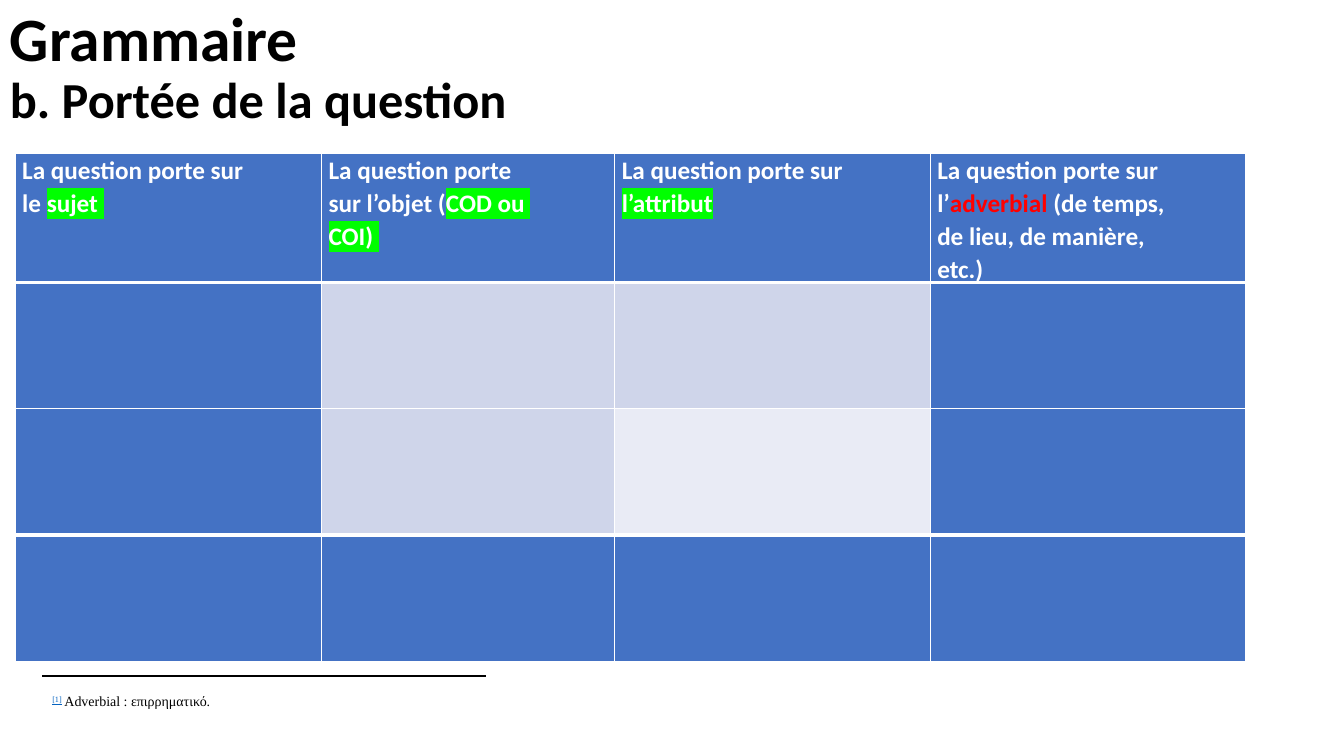
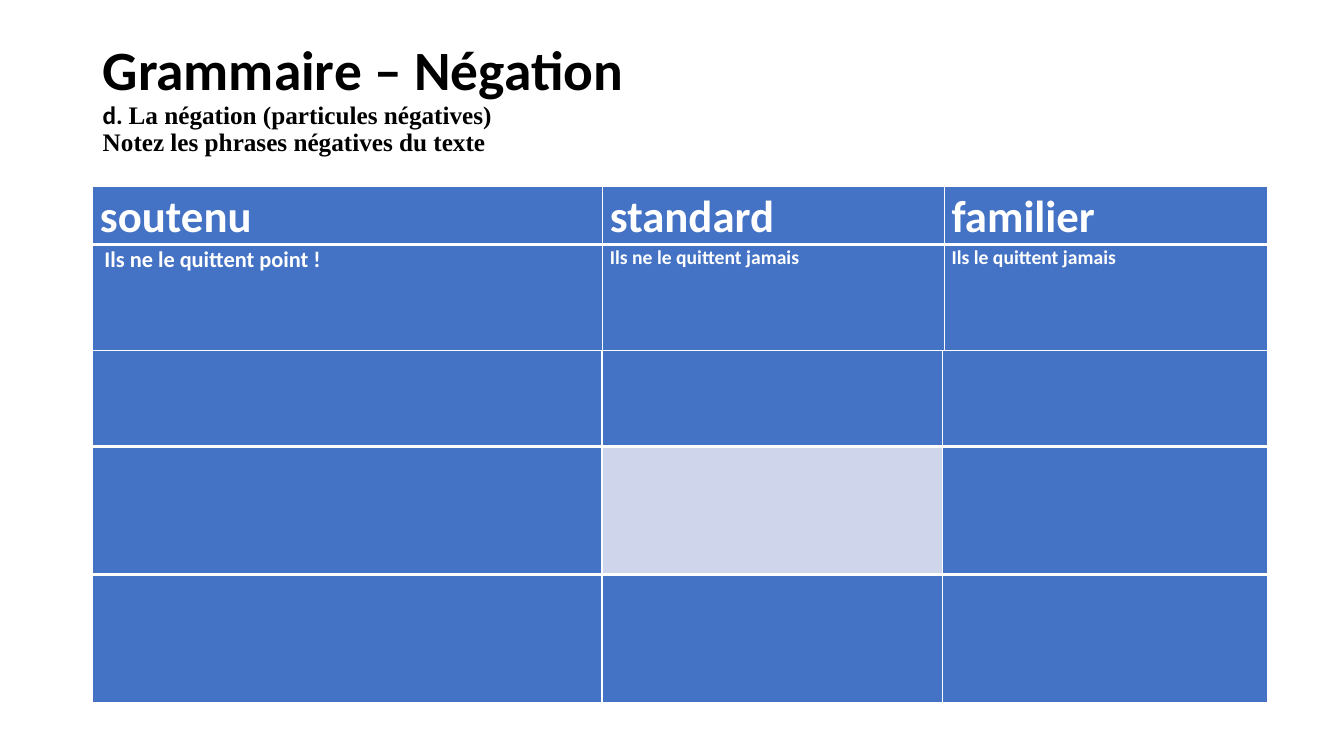
from typing import NamedTuple, Optional

from lxml.etree import SubElement
from pptx import Presentation
from pptx.dml.color import RGBColor
from pptx.enum.shapes import MSO_CONNECTOR
from pptx.enum.text import MSO_ANCHOR
from pptx.oxml.ns import qn
from pptx.util import Cm, Pt

BLACK = RGBColor(0x00, 0x00, 0x00)
WHITE = RGBColor(0xFF, 0xFF, 0xFF)
RED = RGBColor(0xFF, 0x00, 0x00)
GREEN = RGBColor(0x00, 0xFF, 0x00)
LINK_BLUE = RGBColor(0x05, 0x63, 0xC1)
BLUE = RGBColor(0x44, 0x72, 0xC4)
PALE = RGBColor(0xCF, 0xD5, 0xEA)
PALER = RGBColor(0xE9, 0xEB, 0xF5)

SANS = "Calibri"
SERIF = "Times New Roman"


class Run(NamedTuple):
    text: str
    size: float = 18
    color: Optional[RGBColor] = None
    font: str = SANS
    bold: bool = True
    highlight: Optional[RGBColor] = None
    underline: bool = False
    superscript: bool = False


class Deck:
    TITLE_SPACING = 0.9
    CELL_SPACING = 1.07
    CELL_MARGIN = Cm(0.18)
    THIN, THICK = Pt(1), Pt(3)

    def __init__(self):
        self.prs = Presentation()
        self.prs.slide_width, self.prs.slide_height = Cm(33.87), Cm(19.05)
        self.slide = None

    def new_slide(self):
        self.slide = self.prs.slides.add_slide(self.prs.slide_layouts[6])

    def add_lines(self, frame, lines, color, spacing):
        """Fill a text frame with one paragraph per line, each a list of runs."""
        for i, line in enumerate(lines):
            paragraph = frame.paragraphs[0] if i == 0 else frame.add_paragraph()
            paragraph.line_spacing = spacing
            for part in line:
                self.add_run(paragraph, part, color)

    def add_run(self, paragraph, part, color):
        run = paragraph.add_run()
        run.text = part.text
        font = run.font
        font.size, font.bold = Pt(part.size), part.bold
        font.color.rgb = part.color or color
        props = run._r.get_or_add_rPr()
        if part.highlight:
            mark = SubElement(props, qn("a:highlight"))
            SubElement(mark, qn("a:srgbClr"), val=str(part.highlight))
        font.name = part.font
        if part.underline:
            font.underline = True
        if part.superscript:
            props.set("baseline", "30000")

    def text(self, left, top, width, height, lines, spacing=1.0, wrap=True):
        box = self.slide.shapes.add_textbox(Cm(left), Cm(top), Cm(width), Cm(height))
        frame = box.text_frame
        frame.word_wrap = wrap
        frame.vertical_anchor = MSO_ANCHOR.MIDDLE
        self.add_lines(frame, lines, BLACK, spacing)

    def title(self, left, top, height, lines):
        self.text(left, top, 29.21, height, lines, self.TITLE_SPACING)

    def rule(self, left, top, width):
        line = self.slide.shapes.add_connector(
            MSO_CONNECTOR.STRAIGHT, Cm(left), Cm(top), Cm(left + width), Cm(top))
        line.line.color.rgb, line.line.width = BLACK, Pt(1.5)
        SubElement(line._element.spPr, qn("a:effectLst"))

    def borders(self, cell, above, below):
        props = cell._tc.get_or_add_tcPr()
        sides = {"L": self.THIN, "R": self.THIN, "T": above, "B": below}
        for side, width in sides.items():
            edge = SubElement(props, qn(f"a:ln{side}"), w=str(width))
            fill = SubElement(edge, qn("a:solidFill"))
            SubElement(fill, qn("a:srgbClr"), val=str(WHITE))

    def table(self, left, top, widths, heights, texts, thick_below, fills=None):
        """Draw a blue grid; fills maps (row, column) to the other colours."""
        table = self.slide.shapes.add_table(
            len(heights), len(widths), Cm(left), Cm(top),
            Cm(sum(widths)), Cm(sum(heights))).table
        table.first_row = table.horz_banding = False
        for column, width in zip(table.columns, widths):
            column.width = Cm(width)
        for r, height in enumerate(heights):
            table.rows[r].height = Cm(height)
            above = self.THICK if r - 1 in thick_below else self.THIN
            below = self.THICK if r in thick_below else self.THIN
            for c in range(len(widths)):
                cell = table.cell(r, c)
                self.borders(cell, above, below)
                cell.fill.solid()
                cell.fill.fore_color.rgb = (fills or {}).get((r, c), BLUE)
                cell.margin_left = cell.margin_right = self.CELL_MARGIN
                cell.margin_top = cell.margin_bottom = 0
                if r < len(texts):
                    self.add_lines(cell.text_frame, texts[r][c], WHITE, self.CELL_SPACING)


def question_slide(deck):
    deck.new_slide()
    deck.title(0, -0.1, 3.68, [
        [Run("Grammaire", 44)],
        [Run("b. Portée de la question", 36)],
    ])
    scope = [Run("La question porte sur")]
    headings = [
        [scope, [Run("le "), Run("sujet ", highlight=GREEN)]],
        [[Run("La question porte")],
         [Run("sur l’objet ("), Run("COD ou ", highlight=GREEN)],
         [Run("COI) ", highlight=GREEN)]],
        [scope, [Run("l’attribut", highlight=GREEN)]],
        [scope,
         [Run("l’"), Run("adverbial", color=RED), Run(" (de temps,")],
         [Run("de lieu, de manière,")],
         [Run("etc.)")]],
    ]
    deck.table(0.38, 3.86, [7.72, 7.39, 7.95, 7.95], [3.18] * 4, [headings],
               thick_below={0, 2},
               fills={(1, 1): PALE, (1, 2): PALE, (2, 1): PALE, (2, 2): PALER})
    deck.rule(1.07, 17.03, 11.18)
    deck.text(1.07, 17.04, 33.87, 1.27, [[
        Run("[1]", 10, LINK_BLUE, SERIF, False, underline=True, superscript=True),
        Run(" Adverbial : επιρρηματικό.", 10, font=SERIF, bold=False),
    ]], wrap=False)


def negation_slide(deck):
    deck.new_slide()
    deck.title(2.34, 1.02, 3, [
        [Run("Grammaire – Négation", 39.6)],
        [Run("d. "), Run("La négation (particules négatives)", font=SERIF)],
        [Run("Νοtez les phrases négatives du texte", font=SERIF)],
    ])
    registers = [[[Run(name, 32)]] for name in ("soutenu", "standard", "familier")]
    examples = [
        [[Run(" ", 14), Run("Ils ne le quittent point !", 16)]],
        [[Run("Ils ne le quittent jamais", 14)]],
        [[Run("Ils le quittent jamais", 14)]],
    ]
    deck.table(2.34, 4.7, [12.85, 8.61, 8.15], [1.46, 2.67],
               [registers, examples], thick_below={0})
    deck.table(2.34, 8.84, [12.83, 8.59, 8.18], [2.41, 3.23, 3.23], [],
               thick_below={0, 1}, fills={(1, 1): PALE})


def main():
    deck = Deck()
    question_slide(deck)
    negation_slide(deck)
    deck.prs.save("out.pptx")


if __name__ == "__main__":
    main()
